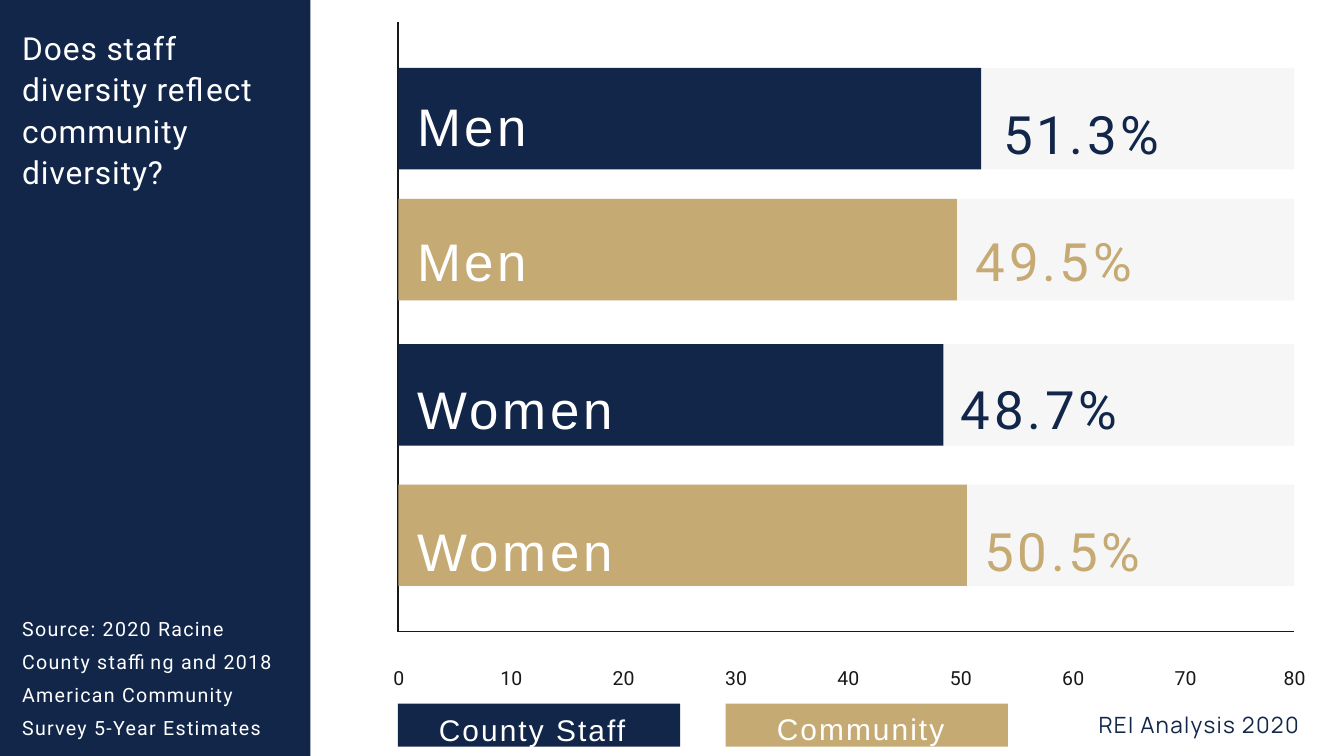
from dataclasses import dataclass

from lxml import etree
from pptx import Presentation
from pptx.dml.color import RGBColor
from pptx.enum.shapes import MSO_CONNECTOR, MSO_SHAPE
from pptx.enum.text import MSO_ANCHOR, MSO_AUTO_SIZE, PP_ALIGN
from pptx.oxml.ns import qn
from pptx.util import Emu, Pt

LEFT, CENTER, RIGHT, JUSTIFY = PP_ALIGN.LEFT, PP_ALIGN.CENTER, PP_ALIGN.RIGHT, PP_ALIGN.JUSTIFY
RECTANGLE = MSO_SHAPE.RECTANGLE
STRAIGHT = MSO_CONNECTOR.STRAIGHT
TOP = MSO_ANCHOR.TOP
GROW = MSO_AUTO_SIZE.SHAPE_TO_FIT_TEXT
EMU_PER_PX = 9144  # 100 px to the inch
TITLE_ONLY = 5


@dataclass(frozen=True)
class TextStyle:
    size: float
    line: float
    tracking: float
    font: str = "Roboto"


@dataclass(frozen=True)
class Theme:
    navy: str = "12264A"
    gold: str = "C6AA74"
    ink: str = "191919"
    white: str = "FFFFFF"
    track: str = "D9D9D9"
    title: TextStyle = TextStyle(34, 44.5, 1)
    source: TextStyle = TextStyle(21, 35.1, 1.4)
    tick: TextStyle = TextStyle(20.8, 31.8, 0.2)
    legend: TextStyle = TextStyle(32, 53.4, 2.2, "Arial")
    credit: TextStyle = TextStyle(24, 33.6, 1.4, "Manrope")
    bar: TextStyle = TextStyle(56.6, 94.5, 3.9, "Arial")
    value: TextStyle = TextStyle(56.6, 94.5, 3.9)


def px(*lengths):
    return [Emu(round(length * EMU_PER_PX)) for length in lengths]


def write_text(shape, text, *, style, color, align=LEFT):
    frame = shape.text_frame
    frame.margin_left = frame.margin_right = frame.margin_top = frame.margin_bottom = 0
    frame.word_wrap = True
    frame.vertical_anchor = TOP
    frame.auto_size = GROW
    paragraph = frame.paragraphs[0]
    paragraph.alignment = align
    paragraph.line_spacing = Pt(style.line)
    paragraph.space_before = Pt(0)
    run = paragraph.add_run()
    run.text = text
    run.font.name = style.font
    run.font.size = Pt(style.size)
    run.font.color.rgb = RGBColor.from_string(color)
    run.font._element.set("spc", str(round(style.tracking * 100)))


class SlideBuilder:
    def __init__(self, slide, theme):
        self.slide = slide
        self.theme = theme

    def rectangle(self, box, color, opacity=100):
        shape = self.slide.shapes.add_shape(RECTANGLE, *px(*box))
        shape.shadow.inherit = False
        shape.fill.solid()
        shape.fill.fore_color.rgb = RGBColor.from_string(color)
        shape.line.fill.background()
        if opacity < 100:
            fill_color = shape._element.spPr.find(".//" + qn("a:srgbClr"))
            etree.SubElement(fill_color, qn("a:alpha")).set("val", str(opacity * 1000))

    def line(self, start, end, width):
        connector = self.slide.shapes.add_connector(STRAIGHT, *px(*start, *end))
        connector.line.color.rgb = RGBColor.from_string(self.theme.ink)
        connector.line.width = Pt(width)
        etree.SubElement(connector._element.spPr, qn("a:effectLst"))

    def text(self, box, text, **text_format):
        write_text(self.slide.shapes.add_textbox(*px(*box)), text, **text_format)

    def title(self, box, text, **text_format):
        title = self.slide.shapes.title
        title.left, title.top, title.width, title.height = px(*box)
        write_text(title, text, **text_format)
        # Bring the title in front of the side panel
        self.slide.shapes._spTree.append(title._element)


def main():
    presentation = Presentation()
    presentation.slide_width, presentation.slide_height = px(2000, 1125)
    slide = presentation.slides.add_slide(presentation.slide_layouts[TITLE_ONLY])
    theme = Theme()
    builder = SlideBuilder(slide, theme)

    # Side panel
    builder.rectangle((0, 0, 462, 1125), theme.navy)
    builder.title((33, 37, 406, 247), "Does staff diversity reflect community diversity?",
                  style=theme.title, color=theme.white)
    builder.text((33, 905, 406, 192),
                 "Source: 2020 Racine County staffing and 2018 American Community "
                 "Survey 5-Year Estimates", style=theme.source, color=theme.white)

    # Axes and tick labels; the last label is held inside the margin
    builder.line((592.5, 33), (592.5, 940), 2.16)
    builder.line((591, 939.5), (1926, 939.5), 0.72)
    for index in range(9):
        left = min(566 + 167.25 * index, 1899)
        builder.text((left, 982, 55, 41), str(index * 10),
                     style=theme.tick, color=theme.ink, align=CENTER)

    # Bars: label, value, colour, bar top, bar width, label top, value left, value top
    bars = [
        ("Men", "51.3%", theme.navy, 101, 867, 102, 1493, 114),
        ("Men", "49.5%", theme.gold, 296, 831, 303, 1452, 304),
        ("Women", "48.7%", theme.navy, 512, 811, 523, 1430, 523),
        ("Women", "50.5%", theme.gold, 721, 846, 735, 1465, 735),
    ]
    for label, value, color, top, width, label_top, value_left, value_top in bars:
        builder.rectangle((594, top, 1332, 151), theme.track, opacity=23)
        builder.rectangle((593, top, width, 151), color)
        builder.text((621, label_top, 335, 122), label, style=theme.bar, color=theme.white)
        builder.text((value_left, value_top, 264, 122), value,
                     style=theme.value, color=color, align=JUSTIFY)

    # Legend
    legend = [
        ("County Staff", theme.navy, 592, (628, 1038, 328, 66), CENTER),
        ("Community", theme.gold, 1080, (1156, 1037, 294, 69), JUSTIFY),
    ]
    for name, color, left, text_box, align in legend:
        builder.rectangle((left, 1047, 420, 64), color)
        builder.text(text_box, name, style=theme.legend, color=theme.white, align=align)

    # Credit
    builder.text((1584, 1051, 349, 46), "REI Analysis 2020",
                 style=theme.credit, color=theme.navy, align=RIGHT)

    presentation.save("out.pptx")


if __name__ == "__main__":
    main()
